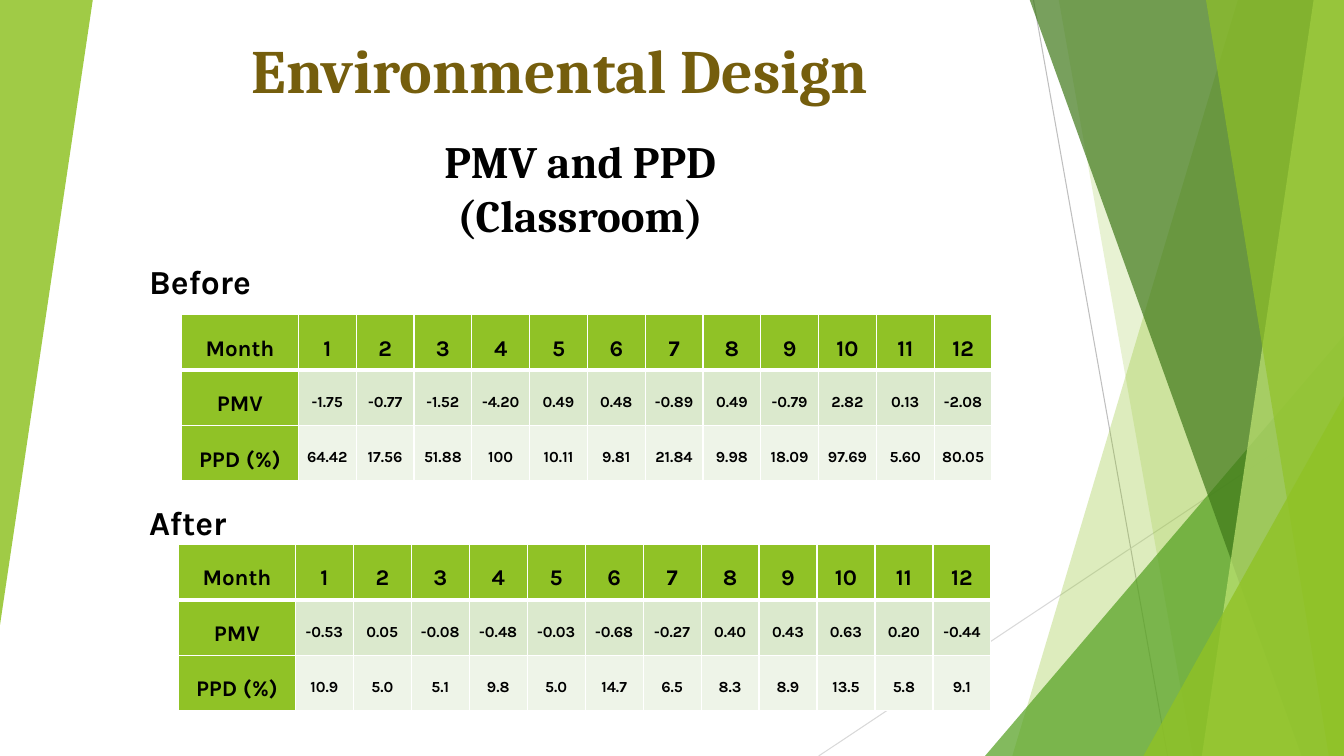
from lxml import etree
from pptx import Presentation
from pptx.dml.color import RGBColor
from pptx.enum import shapes, text
from pptx.oxml import ns
from pptx.util import Inches, Pt

# Colours
LIME = RGBColor(0x90, 0xC2, 0x26)
GREEN = RGBColor(0x54, 0xA0, 0x21)
DARK = RGBColor(0x3F, 0x78, 0x19)
PALE = RGBColor(0xC0, 0xE4, 0x74)
BAND = RGBColor(0xDB, 0xE9, 0xCD)
LIGHT = RGBColor(0xEE, 0xF4, 0xE8)
GOLD = RGBColor(0x75, 0x5E, 0x0D)
INK = RGBColor(0x0D, 0x0D, 0x0D)
BLACK = RGBColor(0, 0, 0)
WHITE = RGBColor(255, 255, 255)
GREY = RGBColor(0xBF, 0xBF, 0xBF)
MIST = RGBColor(0xD9, 0xD9, 0xD9)

# Content
TITLE = "Environmental Design"
TOPIC = "PMV and PPD (Classroom)"
MONTHS = ["Month"] + [str(n) for n in range(1, 13)]
# label, label top, table left, table top, table width, rows
TABLES = [
    ("Before", 2.54, 1.8, 3.12, 8.04, [
        MONTHS,
        "PMV|-1.75|-0.77|-1.52|-4.20|0.49|0.48|-0.89|0.49|-0.79|2.82|0.13|-2.08".split("|"),
        "PPD (%)|64.42|17.56|51.88|100|10.11|9.81|21.84|9.98|18.09|97.69|5.60|80.05".split("|"),
    ]),
    ("After", 4.93, 1.77, 5.4, 8.06, [
        MONTHS,
        "PMV|-0.53|0.05|-0.08|-0.48|-0.03|-0.68|-0.27|0.40|0.43|0.63|0.20|-0.44".split("|"),
        "PPD (%)|10.9|5.0|5.1|9.8|5.0|14.7|6.5|8.3|8.9|13.5|5.8|9.1".split("|"),
    ]),
]
FILLS = [LIME, BAND, LIGHT]
HEAD_W, ROW_H = 1.16, 0.55

# Backdrop: lines, then panes from back to front
WIDE, HIGH = 13.33, 7.5
LINES = [(10.25, 0, 11.58, HIGH, GREY), (WIDE, 4.03, 8.12, HIGH, MIST)]
# A band runs from its left edge (top x, bottom x) to the slide's right side
# A wedge is a right triangle: left, top, width, height, turn
PANES = [
    ("band", (12.28, 10.04), LIME, 30),
    ("band", (10.5, 11.83), LIME, 20),
    ("wedge", (9.77, 3.33, 3.56, 4.17, 0), GREEN, 72),
    ("band", (10.21, 12.91), DARK, 70),
    ("band", (13.03, 11.92), PALE, 70),
    ("band", (11.96, 13.18), LIME, 65),
    ("wedge", (11.34, 3.93, 1.99, 3.57, 0), LIME, 80),
    ("wedge", (0, 0, 0.92, 6.2, 180), LIME, 85),
]

deck = Presentation()
deck.slide_width, deck.slide_height = Inches(WIDE), Inches(HIGH)
slide = deck.slides.add_slide(deck.slide_layouts[6])
items = slide.shapes


def add(node, tag, **attrs):
    return etree.SubElement(node, ns.qn(tag), attrs)


def add_ln(node, tag, color, points):
    ln = add(node, tag, w=str(Pt(points)))
    add(add(ln, "a:solidFill"), "a:srgbClr", val=str(color))


def style(para, face, size, color=BLACK):
    font = para.font
    font.name, font.size, font.bold = face, Pt(size), True
    font.color.rgb = color


def put_text(words, box, face, size, color=BLACK, center=True):
    frame = items.add_textbox(*map(Inches, box)).text_frame
    frame.word_wrap = center
    para = frame.paragraphs[0]
    para.text = words
    if center:
        para.alignment = text.PP_ALIGN.CENTER
    style(para, face, size, color)
    return para


def put_band(top, foot):
    path = items.build_freeform(Inches(top), Inches(-0.01), scale=1.0)
    ends = [(WIDE, -0.01), (WIDE, HIGH), (foot, HIGH)]
    path.add_line_segments([(Inches(x), Inches(y)) for x, y in ends])
    return path.convert_to_shape()


def put_wedge(x, y, w, h, turn):
    wedge = items.add_shape(shapes.MSO_SHAPE.ISOSCELES_TRIANGLE,
                            *map(Inches, (x, y, w, h)))
    wedge.adjustments[0] = 1.0
    wedge.rotation = turn
    return wedge


def put_table(x, y, width, rows):
    count = len(rows[0])
    frame = items.add_table(len(rows), count, Inches(x), Inches(y),
                            Inches(width), Inches(ROW_H * len(rows)))
    grid = frame.table
    for c, col in enumerate(grid.columns):
        col.width = Inches(HEAD_W if c == 0 else (width - HEAD_W) / (count - 1))
    for r, row in enumerate(rows):
        grid.rows[r].height = Inches(ROW_H)
        for c, words in enumerate(row):
            put_cell(grid.cell(r, c), words, r, c)


def put_cell(cell, words, r, c):
    head = r == 0 or c == 0
    # The rule under the month row is the heavy one
    sides = {"L": 1, "R": 1, "T": 3 if r == 1 else 1, "B": 3 if r == 0 else 1}
    props = cell._tc.get_or_add_tcPr()
    for side, points in sides.items():
        add_ln(props, "a:ln" + side, WHITE, points)
    cell.fill.solid()
    cell.fill.fore_color.rgb = LIME if head else FILLS[r]
    cell.margin_left = cell.margin_right = Inches(0.07)
    cell.margin_top = cell.margin_bottom = 0
    cell.vertical_anchor = text.MSO_ANCHOR.MIDDLE
    para = cell.text_frame.paragraphs[0]
    para.text = words
    para.alignment = text.PP_ALIGN.CENTER
    para.line_spacing = 1.5
    style(para, "Karla", 16 if head else 11)


# Backdrop
for x1, y1, x2, y2, color in LINES:
    line = items.add_connector(shapes.MSO_CONNECTOR.STRAIGHT,
                               *map(Inches, (x1, y1, x2, y2)))
    line.line.color.rgb = color
    line.line.width = Pt(0.75)
    add(line._element.spPr, "a:effectLst")

for kind, place, color, alpha in PANES:
    pane = (put_band if kind == "band" else put_wedge)(*place)
    pane.shadow.inherit = False
    pane.line.fill.background()
    pane.fill.solid()
    pane.fill.fore_color.rgb = color
    tint = pane._element.spPr.find(".//" + ns.qn("a:srgbClr"))
    add(tint, "a:alpha", val=str(alpha * 1000))

# Headings
title = put_text(TITLE, (1.28, 0.27, 8.55, 0.84), "Cambria", 44, GOLD)
add_ln(title.runs[0]._r.get_or_add_rPr(), "a:ln", INK, 1.75)
put_text(TOPIC, (4.01, 1.28, 3.49, 1.18), "Cambria", 32)

# Labelled tables
for label, label_y, x, y, width, rows in TABLES:
    put_table(x, y, width, rows)
    put_text(label, (1.38, label_y, 1.25, 0.5), "Karla", 24, center=False)

deck.save("out.pptx")
